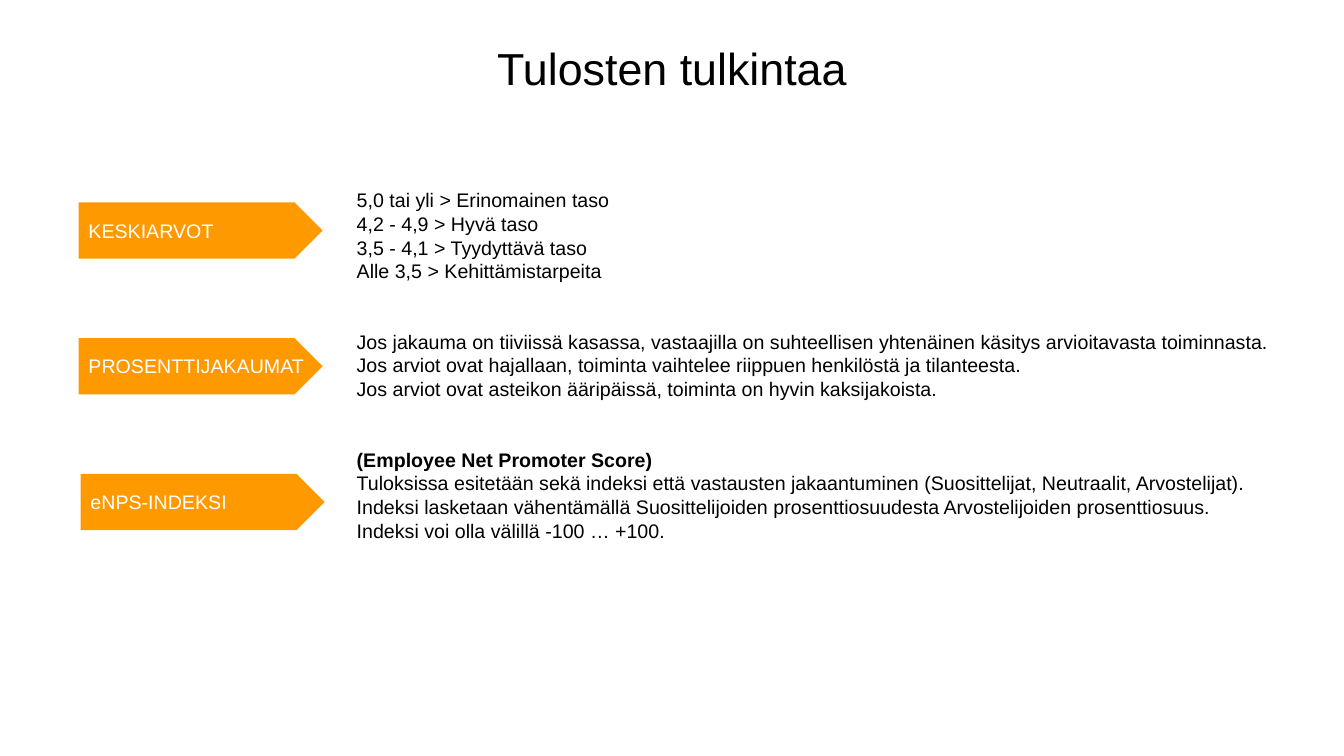
import pptx
import pptx.util
import pptx.dml.color
import pptx.enum.shapes
import pptx.enum.text

Cm = pptx.util.Cm
Pt = pptx.util.Pt
Align = pptx.enum.text.PP_ALIGN
Anchor = pptx.enum.text.MSO_ANCHOR

title = "Tulosten tulkintaa"
labels = [("KESKIARVOT", 1.98), ("PROSENTTIJAKAUMAT", 1.98), ("eNPS-INDEKSI", 2.03)]
groups = [
    [
        "5,0 tai yli > Erinomainen taso",
        "4,2 - 4,9 > Hyvä taso",
        "3,5 - 4,1 > Tyydyttävä taso",
        "Alle 3,5 > Kehittämistarpeita",
    ],
    [
        "Jos jakauma on tiiviissä kasassa, vastaajilla on suhteellisen yhtenäinen käsitys arvioitavasta toiminnasta.",
        "Jos arviot ovat hajallaan, toiminta vaihtelee riippuen henkilöstä ja tilanteesta.",
        "Jos arviot ovat asteikon ääripäissä, toiminta on hyvin kaksijakoista.",
    ],
    [
        "(Employee Net Promoter Score)",
        "Tuloksissa esitetään sekä indeksi että vastausten jakaantuminen (Suosittelijat, Neutraalit, Arvostelijat).",
        "Indeksi lasketaan vähentämällä Suosittelijoiden prosenttiosuudesta Arvostelijoiden prosenttiosuus.",
        "Indeksi voi olla välillä -100 … +100.",
    ],
]
bold = {"(Employee Net Promoter Score)"}

theme = {
    "font": "Arial",
    "ink": "000000",
    "light": "FFFFFF",
    "plate": "FF9900",
    "head": 32,
    "body": 14,
    "line": 16.85,
}


def color(name):
    return pptx.dml.color.RGBColor.from_string(theme[name])


def write(slide, groups, box, size="body", ink="ink", align=Align.LEFT,
          anchor=Anchor.TOP, line=None):
    frame = slide.shapes.add_textbox(*map(Cm, box)).text_frame
    frame.word_wrap = True
    frame.vertical_anchor = anchor
    para = None
    for group in groups:
        for spot, text in enumerate(group):
            first = para is None
            para = frame.paragraphs[0] if first else frame.add_paragraph()
            para.alignment = align
            if line:
                para.line_spacing = Pt(line)
            if spot == 0 and not first:
                para.space_before = Pt(2 * line)
            run = para.add_run()
            run.text = text
            run.font.name = theme["font"]
            run.font.size = Pt(theme[size])
            run.font.bold = text in bold
            run.font.color.rgb = color(ink)


def plate(slide, box):
    kind = pptx.enum.shapes.MSO_SHAPE.PENTAGON
    shape = slide.shapes.add_shape(kind, *map(Cm, box))
    shape.shadow.inherit = False
    shape.fill.solid()
    shape.fill.fore_color.rgb = color("plate")
    shape.line.fill.background()


def main():
    deck = pptx.Presentation()
    deck.slide_width, deck.slide_height = Cm(33.87), Cm(19.05)
    slide = deck.slides.add_slide(deck.slide_layouts[6])

    write(slide, [[title]], (1.7, 0.76, 30.48, 1.88), size="head",
          align=Align.CENTER, anchor=Anchor.MIDDLE)
    write(slide, groups, (8.74, 4.62, 23.8, 9.25), line=theme["line"])

    top, step = 5.1, 3.42
    for row, (text, left) in enumerate(labels):
        edge = top + row * step
        plate(slide, (left, edge, 6.15, 1.42))
        write(slide, [[text]], (left, edge + 0.28, 6.55, 0.86), ink="light")

    deck.save("out.pptx")


if __name__ == "__main__":
    main()
